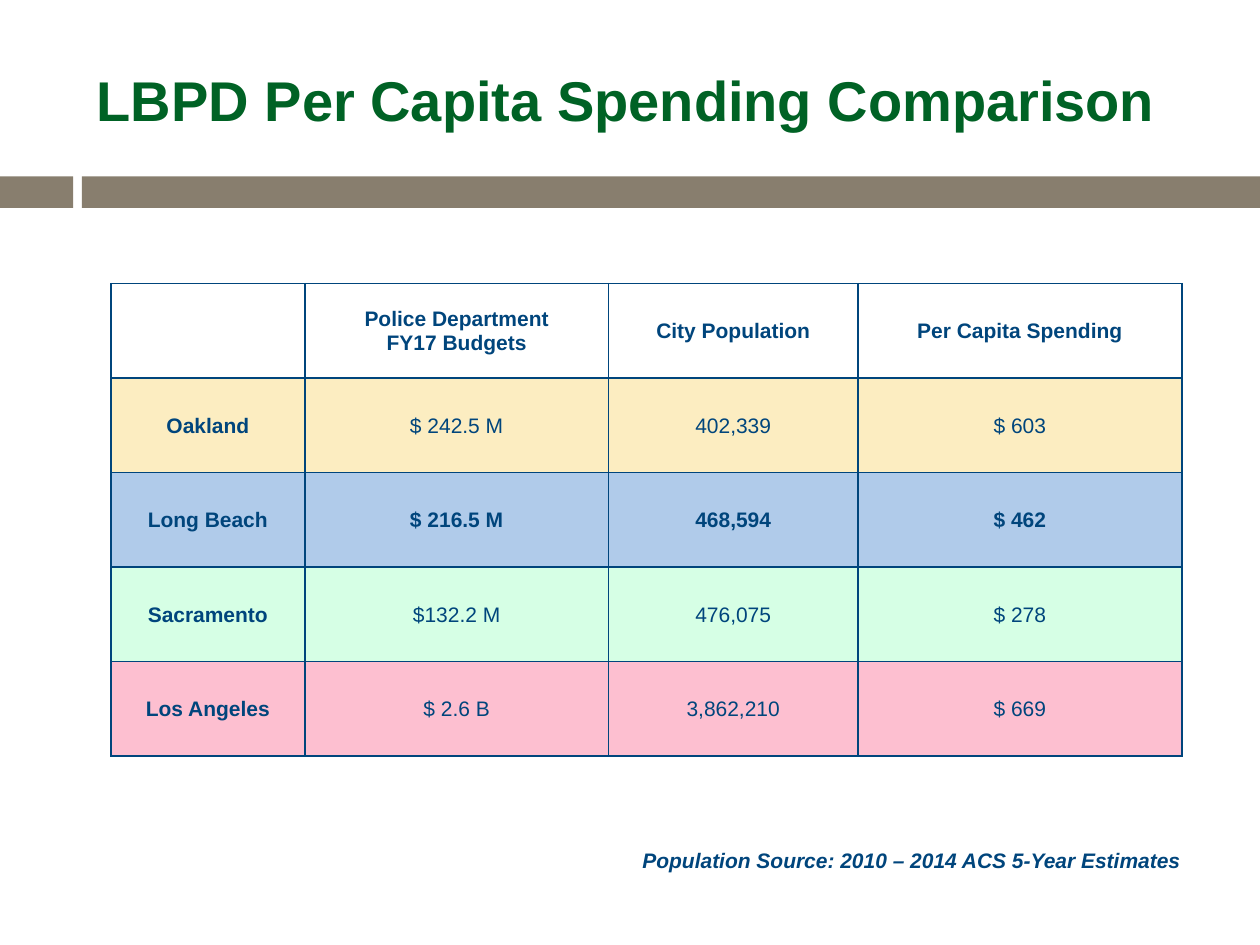
from lxml import etree
from pptx import Presentation
from pptx import util as u
from pptx.dml.color import RGBColor
from pptx.enum import shapes, text
from pptx.oxml.ns import qn

PX = 9144  # 100 px to the inch
NAVY, GREEN, TAUPE = "00457C", "006225", "887E6E"


def rgb(value):
    return RGBColor.from_string(value)


def style(p, size, color, bold=True, italic=False):
    f = p.font
    f.name, f.size, f.bold, f.italic = "Arial", u.Pt(size), bold, italic
    f.color.rgb = rgb(color)


prs = Presentation()
prs.slide_width, prs.slide_height = 1000 * PX, 750 * PX
s = prs.slides.add_slide(prs.slide_layouts[6])

# Divider bars
for left, width in ((0, 58), (65, 935)):
    bar = s.shapes.add_shape(shapes.MSO_SHAPE.RECTANGLE,
                             left * PX, 140 * PX, width * PX, 25 * PX)
    bar.shadow.inherit = False
    bar.fill.solid()
    bar.fill.fore_color.rgb = rgb(TAUPE)
    bar.line.fill.background()

# Title
tf = s.shapes.add_textbox(67 * PX, 25 * PX, 892 * PX, 108 * PX).text_frame
tf.word_wrap = True
tf.vertical_anchor = text.MSO_ANCHOR.MIDDLE
tf.text = "LBPD Per Capita Spending Comparison"
style(tf.paragraphs[0], 32, GREEN)

# Population source
tf = s.shapes.add_textbox(500 * PX, 668 * PX, 451 * PX, 30 * PX).text_frame
tf.word_wrap = False
tf.auto_size = text.MSO_AUTO_SIZE.SHAPE_TO_FIT_TEXT
tf.text = "Population Source: 2010 – 2014 ACS 5-Year Estimates"
style(tf.paragraphs[0], 12, NAVY, italic=True)

# Spending table: fill and cell texts of each row
rows = [
    (None, ["", "Police Department\nFY17 Budgets", "City Population", "Per Capita Spending"]),
    ("FCEDC1", ["Oakland", "$ 242.5 M", "402,339", "$ 603"]),
    ("B0CBEA", ["Long Beach", "$ 216.5 M", "468,594", "$ 462"]),
    ("D6FFE5", ["Sacramento", "$132.2 M", "476,075", "$ 278"]),
    ("FDBFD0", ["Los Angeles", "$ 2.6 B", "3,862,210", "$ 669"]),
]
widths = [154, 241, 198, 257]
table = s.shapes.add_table(len(rows), len(widths), 88 * PX, 225 * PX,
                           sum(widths) * PX, 75 * len(rows) * PX).table
table.first_row = table.horz_banding = False
for column, width in zip(table.columns, widths):
    column.width = width * PX

for i, (fill, values) in enumerate(rows):
    for j, value in enumerate(values):
        cell = table.cell(i, j)
        cell.margin_left = cell.margin_right = cell.margin_top = PX
        cell.margin_bottom = 0
        cell.vertical_anchor = text.MSO_ANCHOR.MIDDLE

        # Borders come before the fill in the cell properties
        tc_pr = cell._tc.get_or_add_tcPr()
        for side in ("a:lnL", "a:lnR", "a:lnT", "a:lnB"):
            ln = etree.SubElement(tc_pr, qn(side), w=str(u.Pt(1)))
            solid = etree.SubElement(ln, qn("a:solidFill"))
            etree.SubElement(solid, qn("a:srgbClr"), val=NAVY)
        if fill:
            cell.fill.solid()
            cell.fill.fore_color.rgb = rgb(fill)
        else:
            cell.fill.background()

        # Headings and the Long Beach row are bold
        cell.text = value
        for p in cell.text_frame.paragraphs:
            p.alignment = text.PP_ALIGN.CENTER
            style(p, 12, NAVY, bold=i == 0 or j == 0 or values[0] == "Long Beach")

prs.save("out.pptx")
